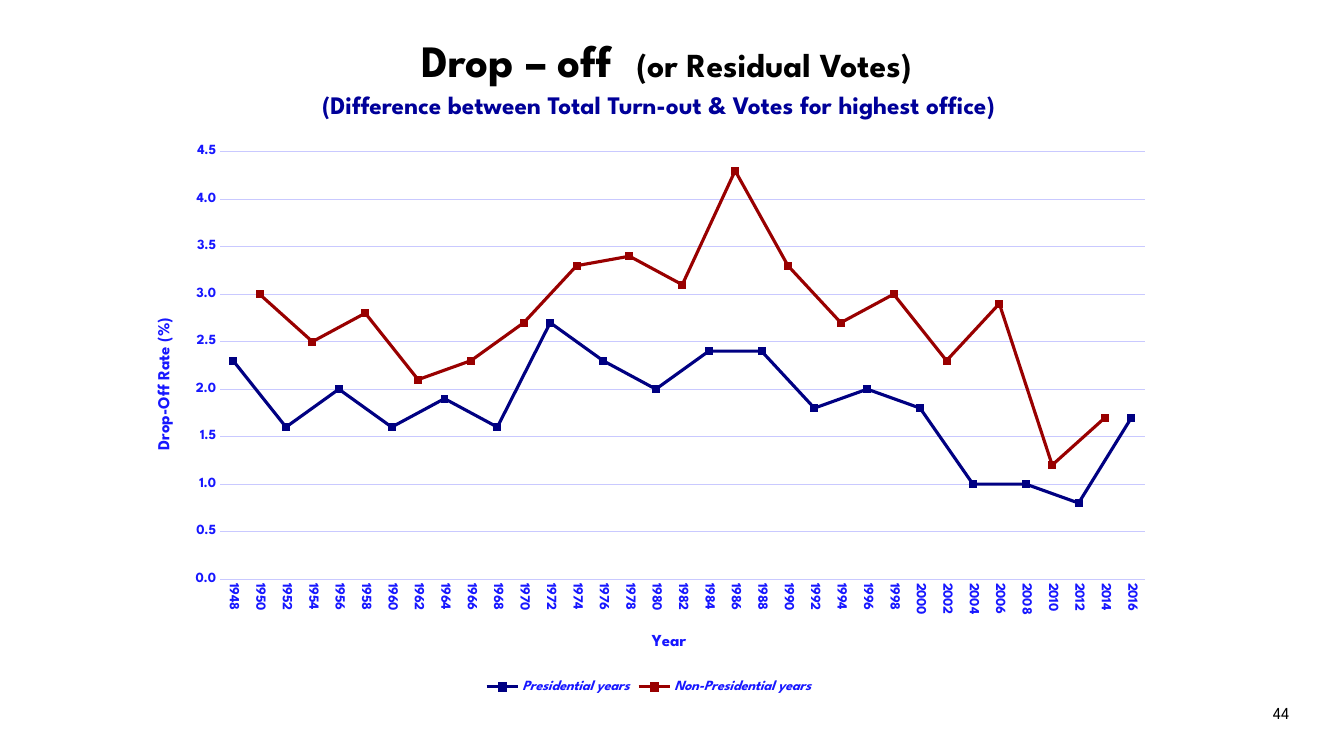
from pptx import Presentation
from pptx.chart.data import CategoryChartData
from pptx.dml.color import RGBColor
from pptx.enum.chart import (XL_CHART_TYPE, XL_LEGEND_POSITION, XL_MARKER_STYLE,
                             XL_TICK_MARK)
from pptx.enum.text import MSO_ANCHOR, PP_ALIGN
from pptx.oxml import parse_xml
from pptx.oxml.ns import nsdecls, qn
from pptx.util import Cm, Pt

FONT = "League Spartan"
BLACK, NAVY, BLUE, LILAC = "000000", "000099", "1717FF", "C9C9FF"
FIRST_YEAR, LAST_YEAR = 1948, 2016
# Each series: name, colour, first year; its values follow every four years.
SERIES = [
    ("Presidential years", "000082", 1948,
     [2.3, 1.6, 2, 1.6, 1.9, 1.6, 2.7, 2.3, 2, 2.4, 2.4, 1.8, 2, 1.8, 1, 1, 0.8, 1.7]),
    ("Non-Presidential years", "990000", 1950,
     [3, 2.5, 2.8, 2.1, 2.3, 2.7, 3.3, 3.4, 3.1, 4.3, 3.3, 2.7, 3, 2.3, 2.9, 1.2, 1.7]),
]


def color(value):
    return RGBColor.from_string(value)


def format_font(font, size, value, **settings):
    settings = {"name": FONT, "size": Pt(size), **settings}
    for name, setting in settings.items():
        setattr(font, name, setting)
    font.color.rgb = color(value)


def format_line(line, value, width):
    line.color.rgb = color(value)
    line.width = Pt(width)


def add_text(slide, box, runs, value, anchor=MSO_ANCHOR.TOP, align=PP_ALIGN.LEFT, bold=True):
    """Place one paragraph of (text, size) runs in the box."""
    frame = slide.shapes.add_textbox(*box).text_frame
    frame.word_wrap = True
    frame.vertical_anchor = anchor
    paragraph = frame.paragraphs[0]
    paragraph.alignment = align
    for text, size in runs:
        run = paragraph.add_run()
        run.text = text
        format_font(run.font, size, value, bold=bold)


def add_heading(slide, left, top):
    add_text(slide, (left + Cm(2.51), top, Cm(14.15), Cm(1.7)),
             [("Drop – off  ", 32), ("(or Residual Votes)", 24)], BLACK, MSO_ANCHOR.BOTTOM)
    add_text(slide, (left, top + Cm(1.52), Cm(19.46), Cm(1.02)),
             [("(Difference between Total Turn-out & Votes for highest office)", 18)], NAVY)


def set_layout(element, position, **values):
    """Give a chart part a manual layout in fractions of the chart."""
    for old in element.findall(qn("c:layout")):
        element.remove(old)
    modes = "".join(f'<c:{axis}Mode val="edge"/>' for axis in "xy")
    sizes = "".join(f'<c:{name} val="{value}"/>' for name, value in values.items())
    target = '<c:layoutTarget val="inner"/>' if "w" in values else ""
    element.insert(position, parse_xml(
        f'<c:layout {nsdecls("c")}><c:manualLayout>{target}{modes}{sizes}'
        '</c:manualLayout></c:layout>'))


def format_axis(axis, title, x, y):
    axis.major_tick_mark = axis.minor_tick_mark = XL_TICK_MARK.NONE
    format_font(axis.tick_labels.font, 10, BLUE, bold=True)
    frame = axis.axis_title.text_frame
    frame.text = title
    format_font(frame.paragraphs[0].runs[0].font, 12, BLUE, bold=True)
    set_layout(axis.axis_title._element, 1, x=x, y=y)


def drop_off_data():
    data = CategoryChartData(number_format="0.0")
    years = range(FIRST_YEAR, LAST_YEAR + 1, 2)
    data.categories = [str(year) for year in years]
    for name, _, start, values in SERIES:
        by_year = {start + 4 * index: value for index, value in enumerate(values)}
        data.add_series(name, [by_year.get(year) for year in years])
    return data


def add_drop_off_chart(slide, box):
    chart = slide.shapes.add_chart(XL_CHART_TYPE.LINE_MARKERS, *box, drop_off_data()).chart
    format_font(chart.font, 10, NAVY)
    chart.has_title = False
    chart.has_legend = True
    chart.legend.position = XL_LEGEND_POSITION.BOTTOM
    chart.legend.include_in_layout = False
    format_font(chart.legend.font, 10, BLUE, bold=True, italic=True)

    year_axis, rate_axis = chart.category_axis, chart.value_axis
    format_axis(year_axis, "Year", 0.5, 0.88)
    format_line(year_axis.format.line, LILAC, 0.75)
    year_axis.tick_labels.font._element.getparent().getparent().getparent().find(
        qn("a:bodyPr")).set("rot", "5400000")
    format_axis(rate_axis, "Drop-Off Rate (%)", 0.02, 0.32)
    scale = {"minimum_scale": 0, "maximum_scale": 4.5, "major_unit": 0.5}
    for name, value in scale.items():
        setattr(rate_axis, name, value)
    rate_axis.tick_labels.number_format = "0.0"
    rate_axis.tick_labels.number_format_is_linked = False
    rate_axis.format.line.fill.background()
    format_line(rate_axis.major_gridlines.format.line, LILAC, 0.75)

    plot = chart.plots[0]
    plot.vary_by_categories = False
    for series, (_, value, _, _) in zip(plot.series, SERIES):
        series.smooth = False
        format_line(series.format.line, value, 2.25)
        marker = series.marker
        marker.style, marker.size = XL_MARKER_STYLE.SQUARE, 5
        marker.format.fill.solid()
        marker.format.fill.fore_color.rgb = color(value)
        format_line(marker.format.line, value, 0.75)

    chart_element = chart._chartSpace.find(qn("c:chart"))
    set_layout(chart_element.find(qn("c:plotArea")), 0, x=0.085, y=0.03, w=0.895, h=0.76)
    chart_element.find(qn("c:dispBlanksAs")).set("val", "span")


def main():
    presentation = Presentation()
    presentation.slide_width, presentation.slide_height = Cm(33.87), Cm(19.05)
    slide = presentation.slides.add_slide(presentation.slide_layouts[6])
    add_heading(slide, Cm(7.87), Cm(0.61))
    add_drop_off_chart(slide, (Cm(3.33), Cm(3.4), Cm(26.04), Cm(14.17)))
    add_text(slide, (Cm(28.78), Cm(17.58), Cm(3.96), Cm(0.69)), [("44", 12)], BLACK,
             align=PP_ALIGN.RIGHT, bold=False)
    presentation.save("out.pptx")


if __name__ == "__main__":
    main()
